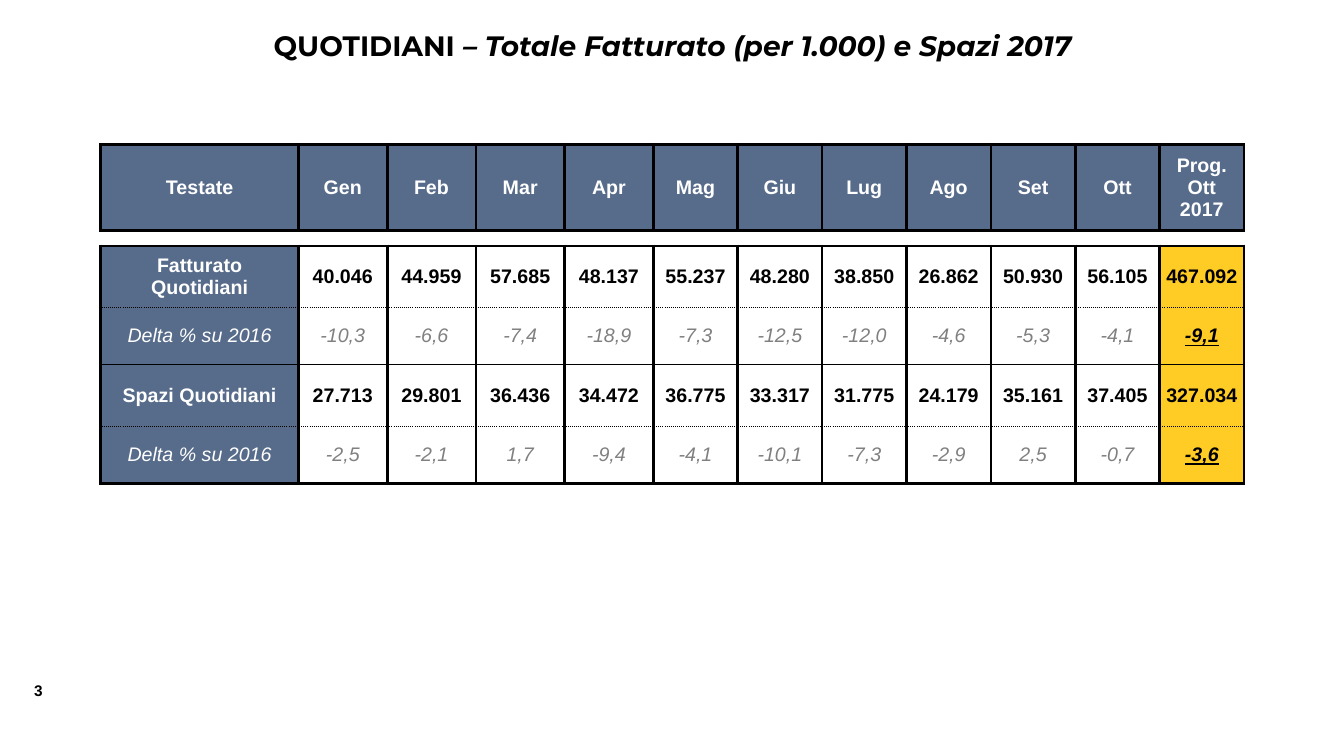
from lxml.etree import SubElement
from pptx import Presentation
from pptx.dml.color import RGBColor
from pptx.enum.text import MSO_ANCHOR, PP_ALIGN
from pptx.oxml.ns import qn
from pptx.util import Inches, Pt

BLACK, WHITE, GREY = "000000", "FFFFFF", "808080"
BLUE, YELLOW = "576B8A", "FFCB25"

# Borders: width in points and dash
THICK, THIN, DOTTED = (2.25, "solid"), (1, "solid"), (1, "sysDot")

MONTHS = ["Gen", "Feb", "Mar", "Apr", "Mag", "Giu", "Lug", "Ago", "Set", "Ott"]
HEADER = ["Testate"] + MONTHS + ["Prog. Ott 2017"]
TOTALS = [
    ["Fatturato Quotidiani", "40.046", "44.959", "57.685", "48.137", "55.237", "48.280",
     "38.850", "26.862", "50.930", "56.105", "467.092"],
    ["Spazi Quotidiani", "27.713", "29.801", "36.436", "34.472", "36.775", "33.317",
     "31.775", "24.179", "35.161", "37.405", "327.034"],
]
DELTAS = [
    ["Delta % su 2016", "-10,3", "-6,6", "-7,4", "-18,9", "-7,3", "-12,5",
     "-12,0", "-4,6", "-5,3", "-4,1", "-9,1"],
    ["Delta % su 2016", "-2,5", "-2,1", "1,7", "-9,4", "-4,1", "-10,1",
     "-7,3", "-2,9", "2,5", "-0,7", "-3,6"],
]


def rgb(value):
    return RGBColor.from_string(value)


class SlideBuilder:
    def __init__(self, slide, font="Arial"):
        self.s = slide
        self.font = font

    def run(self, p, text, size, color=BLACK, bold=True, italic=False,
            underline=False, font=None):
        r = p.add_run()
        r.text = text
        r.font.name = font or self.font
        r.font.size = Pt(size)
        r.font.bold, r.font.italic, r.font.underline = bold, italic, underline
        r.font.color.rgb = rgb(color)

    def text(self, left, top, width, height, wrap=True, align=PP_ALIGN.LEFT):
        sp = self.s.shapes.add_textbox(Inches(left), Inches(top), Inches(width), Inches(height))
        tf = sp.text_frame
        tf.word_wrap = wrap
        p = tf.paragraphs[0]
        p.alignment = align
        return p

    def table(self, left, top, widths, heights):
        tbl = self.s.shapes.add_table(
            len(heights), len(widths), Inches(left), Inches(top),
            Inches(sum(widths)), Inches(sum(heights))).table
        tbl.first_row = tbl.horz_banding = False
        for column, width in zip(tbl.columns, widths):
            column.width = Inches(width)
        for row, height in zip(tbl.rows, heights):
            row.height = Inches(height)
        return tbl

    def cell(self, cell, sides, top, bottom, fill=None, padded=False):
        cell.vertical_anchor = MSO_ANCHOR.MIDDLE
        cell.margin_left = cell.margin_right = Inches(0.1 if padded else 0)
        cell.margin_top = cell.margin_bottom = Inches(0.05 if padded else 0)
        tcPr = cell._tc.get_or_add_tcPr()
        for tag, border in zip(("lnL", "lnR", "lnT", "lnB"), (sides, sides, top, bottom)):
            ln = SubElement(tcPr, qn(f"a:{tag}"))
            if border is None:
                SubElement(ln, qn("a:noFill"))
                continue
            width, dash = border
            ln.set("w", str(Pt(width)))
            line = SubElement(ln, qn("a:solidFill"))
            SubElement(line, qn("a:srgbClr"), val=BLACK)
            SubElement(ln, qn("a:prstDash"), val=dash)
        if fill:
            cell.fill.solid()
            cell.fill.fore_color.rgb = rgb(fill)
        else:
            cell.fill.background()
        p = cell.text_frame.paragraphs[0]
        p.alignment = PP_ALIGN.CENTER
        return p

    def header_row(self, row, labels):
        for cell, label in zip(row.cells, labels):
            p = self.cell(cell, THICK, THICK, THICK, BLUE, padded=True)
            self.run(p, label, 14, WHITE)

    def gap_row(self, row):
        for cell in row.cells:
            p = self.cell(cell, None, THICK, THICK)
            SubElement(p._p, qn("a:endParaRPr"), sz="100")

    def data_row(self, row, values, top, bottom, delta=False):
        last = len(values) - 1
        for i, (cell, value) in enumerate(zip(row.cells, values)):
            fill = {0: BLUE, last: YELLOW}.get(i)
            color = WHITE if i == 0 else GREY if delta and i < last else BLACK
            p = self.cell(cell, THICK, top, bottom, fill, padded=i == 0)
            self.run(p, value, 14, color, bold=not delta or i == last,
                     italic=delta, underline=delta and i == last)


def main():
    prs = Presentation()
    prs.slide_width, prs.slide_height = Inches(13.33), Inches(7.5)
    s = SlideBuilder(prs.slides.add_slide(prs.slide_layouts[6]))

    # Slide number
    s.run(s.text(0.24, 6.71, 0.42, 0.29, wrap=False), "3", 11)

    # Title
    p = s.text(1.67, 0.23, 10, 0.44, align=PP_ALIGN.CENTER)
    s.run(p, "QUOTIDIANI ", 20, font="Montserrat")
    s.run(p, "– Totale Fatturato (per 1.000) e Spazi 2017", 20, italic=True, font="Montserrat")

    # Table: label column, four wider months, equal columns for the rest
    label, wide, total = 1.96, 0.88, 11.34
    narrow = (total - label - 4 * wide) / 7
    tbl = s.table(1, 1.43, [label] + [wide] * 4 + [narrow] * 7,
                  [0.86, 0.15] + [0.61, 0.57] * 2)
    rows = list(tbl.rows)
    s.header_row(rows[0], HEADER)
    s.gap_row(rows[1])
    edges = [THICK, THIN, THICK]
    for i, (totals, deltas) in enumerate(zip(TOTALS, DELTAS)):
        s.data_row(rows[2 + 2 * i], totals, edges[i], DOTTED)
        s.data_row(rows[3 + 2 * i], deltas, DOTTED, edges[i + 1], delta=True)

    prs.save("out.pptx")


if __name__ == "__main__":
    main()
